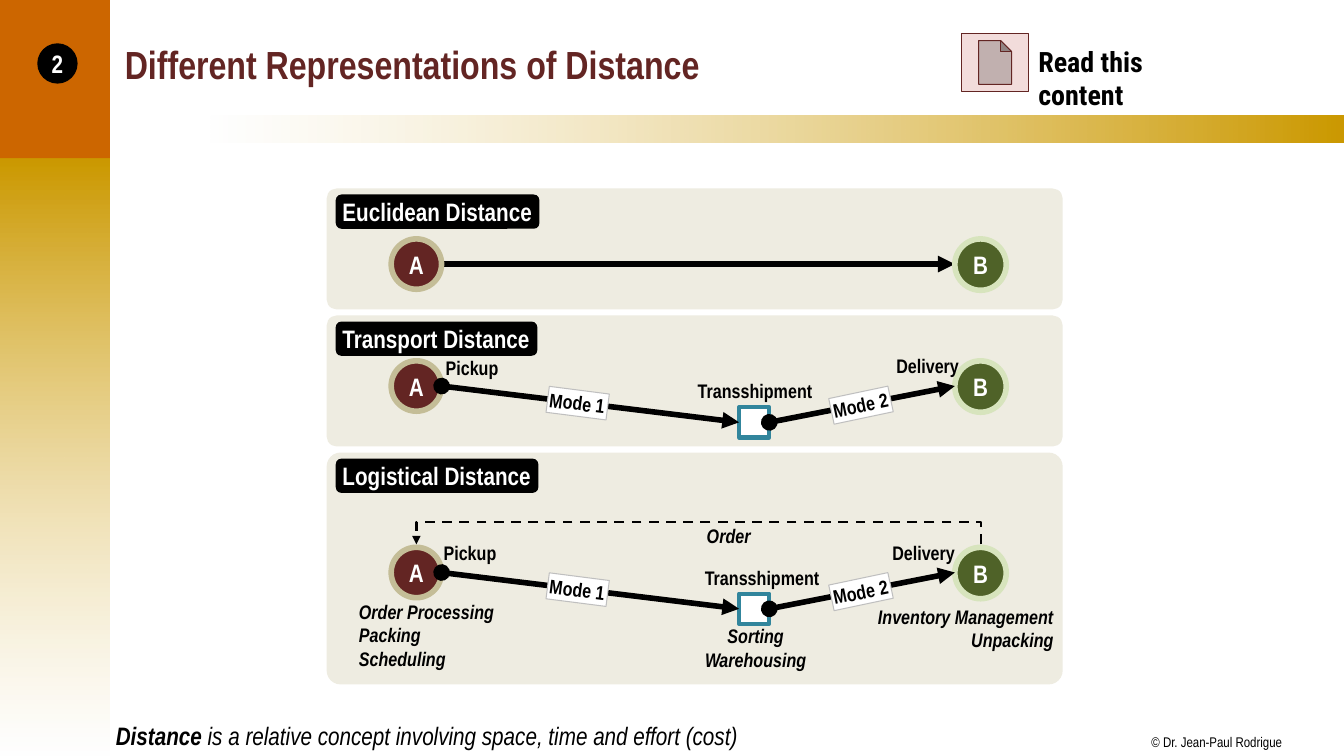
from lxml import etree
from pptx import Presentation
from pptx.dml.color import RGBColor
from pptx.enum import dml, shapes, text
from pptx.oxml.ns import qn
from pptx.util import Inches, Pt

BLACK = RGBColor(0x00, 0x00, 0x00)
WHITE = RGBColor(0xFF, 0xFF, 0xFF)
GOLD = RGBColor(0xCC, 0x99, 0x00)
ORANGE = RGBColor(0xCC, 0x66, 0x00)
MAROON = RGBColor(0x63, 0x25, 0x23)
PINK = RGBColor(0xF2, 0xDC, 0xDB)
BEIGE = RGBColor(0xEE, 0xEC, 0xE1)
TAN = RGBColor(0xC4, 0xBD, 0x97)
GREEN = RGBColor(0x4F, 0x62, 0x28)
LIME = RGBColor(0xD7, 0xE4, 0xBD)
TEAL = RGBColor(0x31, 0x85, 0x9C)
GRAY = RGBColor(0xBF, 0xBF, 0xBF)
SHAPE = shapes.MSO_SHAPE
ALIGN = text.PP_ALIGN
MIDDLE = text.MSO_ANCHOR.MIDDLE


def write(sp, words, size, color=BLACK, bold=True, italic=False, font="Arial Narrow",
          align=ALIGN.LEFT, inset=(0, 0), wrap=False, anchor=text.MSO_ANCHOR.TOP):
    tf = sp.text_frame
    tf.text = words
    tf.word_wrap = wrap
    tf.vertical_anchor = anchor
    tf.margin_left = tf.margin_right = Inches(inset[0])
    tf.margin_top = tf.margin_bottom = Inches(inset[1])
    for p in tf.paragraphs:
        p.alignment = align
        f = p.font
        f.name, f.size, f.bold, f.italic = font, Pt(size), bold, italic
        f.color.rgb = color
    return tf


def label(s, x, y, w, h, words, size=14, **style):
    sp = s.shapes.add_textbox(Inches(x), Inches(y), Inches(w), Inches(h))
    return write(sp, words, size, **style)


def block(s, kind, x, y, w, h, fill=None, line=None, weight=0.75):
    sp = s.shapes.add_shape(kind, Inches(x), Inches(y), Inches(w), Inches(h))
    sp.shadow.inherit = False
    if fill is not None:
        sp.fill.solid()
        sp.fill.fore_color.rgb = fill
    if line is None:
        sp.line.fill.background()
    else:
        sp.line.color.rgb = line
        sp.line.width = Pt(weight)
    return sp


def fade(s, x, y, w, h, colors, angle, clear_stop, alpha):
    sp = block(s, SHAPE.RECTANGLE, x, y, w, h)
    sp.fill.gradient()
    sp.fill.gradient_angle = angle
    for stop, color in zip(sp.fill.gradient_stops, colors):
        stop.color.rgb = color
    clear = list(sp._element.iter(qn("a:gs")))[clear_stop][0]
    etree.SubElement(clear, qn("a:alpha"), val=str(alpha * 1000))


def arrowheads(sp, head=None):
    ln = sp.line._get_or_add_ln()
    if head:
        etree.SubElement(ln, qn("a:headEnd"), type=head)
    etree.SubElement(ln, qn("a:tailEnd"), type="triangle")


def arrow(s, x1, y1, x2, y2, head=None):
    c = s.shapes.add_connector(shapes.MSO_CONNECTOR.STRAIGHT,
                               Inches(x1), Inches(y1), Inches(x2), Inches(y2))
    c.line.color.rgb = BLACK
    c.line.width = Pt(4)
    arrowheads(c, head)
    etree.SubElement(c._element.spPr, qn("a:effectLst"))
    return c


def frame(s, w, h):
    fade(s, -0.02, 1.57, 1.11, h - 1.57, (GOLD, WHITE), 270, 1, 51)
    fade(s, 2.09, 1.15, w - 2.09, 0.26, (WHITE, GOLD), 0, 0, 50)
    label(s, 11.42, h - 0.22, 1.31, 0.17, "© Dr. Jean-Paul Rodrigue", 10, bold=False)
    block(s, SHAPE.RECTANGLE, -0.02, -0.01, 1.11, 1.58, ORANGE)


def header(s, x, y, w, h):
    label(s, x, y, w, h, "Different Representations of Distance", 28, color=MAROON,
          inset=(0.1, 0.05), wrap=True, anchor=MIDDLE)
    number = block(s, SHAPE.OVAL, x - 0.77, y + 0.32, 0.4, 0.4, BLACK)
    write(number, "2", 18, WHITE, align=ALIGN.CENTER, anchor=MIDDLE)
    block(s, SHAPE.ACTION_BUTTON_DOCUMENT, x + 8.4, y + 0.22, 0.66, 0.58, PINK, MAROON)
    label(s, x + 9.06, y + 0.28, 1.86, 0.44, "Read this content", 20,
          font="Roboto Condensed", inset=(0.1, 0.05), wrap=True)


def panel(s, x, y, w, h, heading, heading_w):
    sp = block(s, SHAPE.ROUNDED_RECTANGLE, x, y, w, h, BEIGE)
    sp.adjustments[0] = 0.1 / h if h < 2 else 0.06
    tag = block(s, SHAPE.ROUNDED_RECTANGLE, x + 0.09, y + 0.06, heading_w, 0.34, BLACK)
    write(tag, heading, 18, WHITE, inset=(0.05, 0))


def endpoints(s, x, cy):
    for letter, dx, size, fill, ring in (("A", 0.64, 0.5, MAROON, TAN),
                                         ("B", 6.23, 0.51, GREEN, LIME)):
        sp = block(s, SHAPE.OVAL, x + dx, cy - 0.25, size, size, fill, ring, 4)
        write(sp, letter, 18, WHITE, align=ALIGN.CENTER, anchor=MIDDLE)


def route(s, x, cy, stops):
    endpoints(s, x, cy)
    hub = block(s, SHAPE.RECTANGLE, x + 4.09, cy + 0.21, 0.3, 0.3, WHITE, TEAL, 3)
    for words, dx, dy, w in stops:
        label(s, x + dx, cy + dy, w, 0.24, words)
    arrow(s, x + 1.14, cy, x + 4.09, cy + 0.36, "oval").end_connect(hub, 1)
    arrow(s, x + 4.39, cy + 0.36, x + 6.23, cy, "oval").begin_connect(hub, 3)
    for mode, dx, dy, turn in (("Mode 1", 2.19, 0.04, 7.3), ("Mode 2", 5, 0.06, 348.1)):
        sp = block(s, SHAPE.RECTANGLE, x + dx, cy + dy, 0.6, 0.26, WHITE, GRAY)
        sp.rotation = turn
        write(sp, mode, 14, inset=(0.02, 0.01))


def euclidean(s, x, y, w, h):
    panel(s, x, y, w, h, "Euclidean Distance", 2.02)
    arrow(s, x + 1.14, y + 0.75, x + 6.23, y + 0.75)
    endpoints(s, x, y + 0.75)


def transport(s, x, y, w, h):
    panel(s, x, y, w, h, "Transport Distance", 2)
    route(s, x, y + 0.7, (("Transshipment", 3.68, -0.07, 1.15),
                          ("Pickup", 1.18, -0.3, 0.53),
                          ("Delivery", 5.65, -0.32, 0.63)))


def logistical(s, x, y, w, h):
    panel(s, x, y, w, h, "Logistical Distance", 2.01)
    route(s, x, y + 1.19, (("Transshipment", 3.75, -0.07, 1.15),
                           ("Pickup", 1.16, -0.31, 0.53),
                           ("Delivery", 5.61, -0.31, 0.63)))
    left, right, top, bottom = (Inches(v) for v in (x + 0.89, x + 6.49, y + 0.69, y + 0.91))
    path_pen = s.shapes.build_freeform(right, bottom)
    path_pen.add_line_segments([(right, top), (left, top), (left, bottom)], close=False)
    order = path_pen.convert_to_shape()
    order.shadow.inherit = False
    order.fill.background()
    order.line.color.rgb = BLACK
    order.line.width = Pt(1.75)
    order.line.dash_style = dml.MSO_LINE.DASH
    arrowheads(order)
    for words, dx, dy, tw, th, align in (
            ("Order", 3.77, 0.71, 0.44, 0.24, ALIGN.LEFT),
            ("Inventory Management\nUnpacking", 5.45, 1.51, 1.76, 0.47, ALIGN.RIGHT),
            ("Order Processing\nPacking\vScheduling", 0.32, 1.46, 1.35, 0.71, ALIGN.LEFT),
            ("Sorting\vWarehousing", 3.75, 1.7, 1.01, 0.47, ALIGN.CENTER)):
        label(s, x + dx, y + dy, tw, th, words, italic=True, align=align)


def takeaway(s, x, y, w, h):
    tf = label(s, x, y, w, h, "Distance", 18, italic=True, bold=False, inset=(0.1, 0.05))
    p = tf.paragraphs[0]
    p.runs[0].font.bold = True
    p.add_run().text = " is a relative concept involving space, time and effort (cost)"


def main():
    prs = Presentation()
    prs.slide_width, prs.slide_height = Inches(13.33), Inches(7.5)
    s = prs.slides.add_slide(prs.slide_layouts[6])
    frame(s, 13.33, 7.5)
    header(s, 1.14, 0.11, 11.97, 1.04)
    euclidean(s, 3.24, 1.87, 7.3, 1.2)
    transport(s, 3.24, 3.13, 7.3, 1.3)
    logistical(s, 3.24, 4.49, 7.3, 2.3)
    takeaway(s, 1.05, 7.1, 6.45, 0.4)
    prs.save("out.pptx")


if __name__ == "__main__":
    main()
